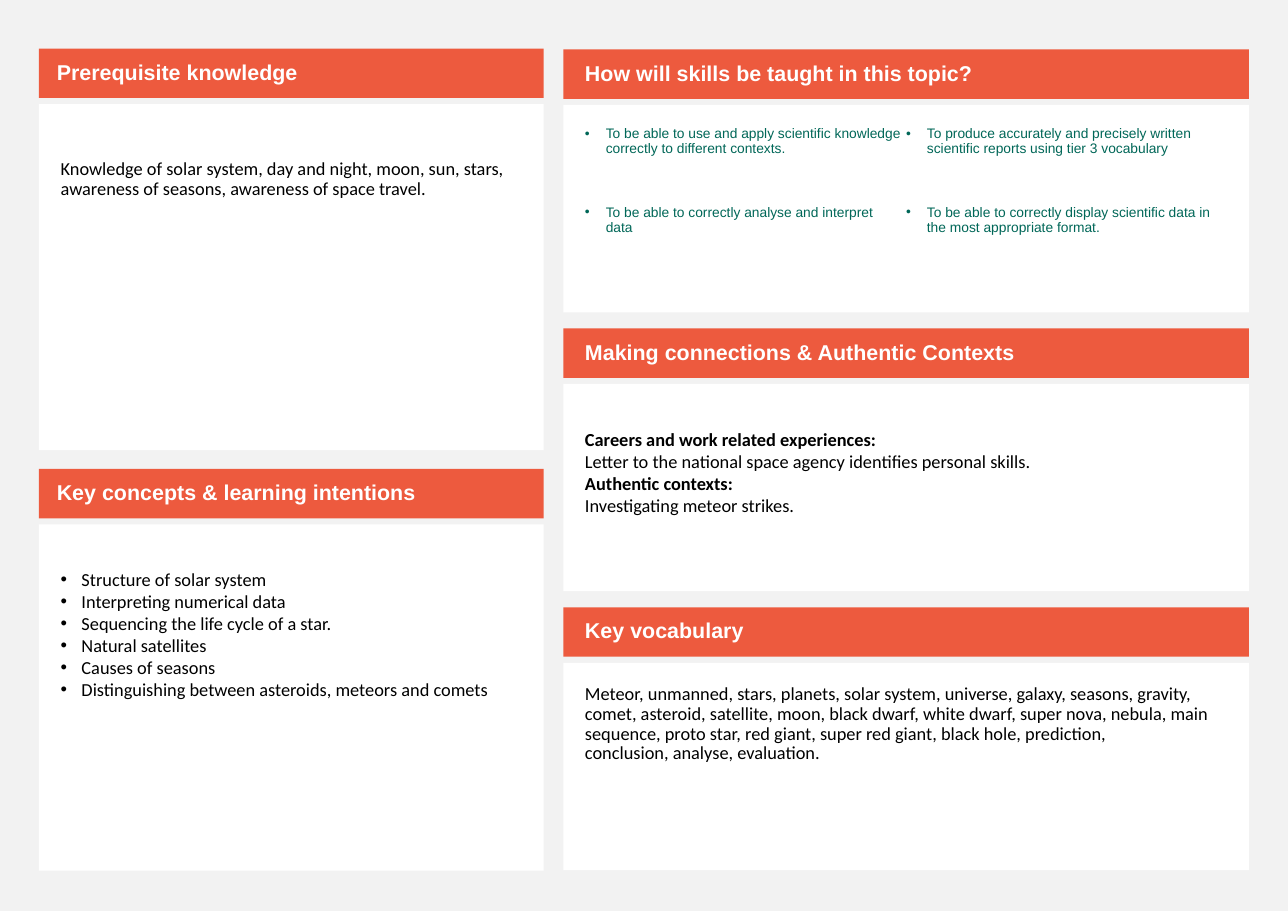
from dataclasses import dataclass

from lxml import etree
from pptx import Presentation
from pptx.dml.color import RGBColor
from pptx.enum.shapes import MSO_SHAPE
from pptx.enum.text import MSO_ANCHOR, PP_ALIGN
from pptx.oxml.ns import qn
from pptx.shapes.autoshape import Shape
from pptx.slide import Slide
from pptx.util import Cm, Pt

RECTANGLE = MSO_SHAPE.RECTANGLE
TOP, MIDDLE = MSO_ANCHOR.TOP, MSO_ANCHOR.MIDDLE
LEFT = PP_ALIGN.LEFT

GREY = RGBColor(0xF2, 0xF2, 0xF2)
ORANGE = RGBColor(0xED, 0x5A, 0x3E)
WHITE = RGBColor(0xFF, 0xFF, 0xFF)
BLACK = RGBColor(0x00, 0x00, 0x00)
GREEN = RGBColor(0x00, 0x67, 0x58)

HEADER_HEIGHT = 1.14
BODY_OFFSET = 1.28
PADDING = 0.5
BULLET_INDENT = 0.48
HARD_SPACE = chr(160)  # keeps two words on one line


@dataclass(frozen=True)
class TextStyle:
    font: str
    size: float
    color: RGBColor
    bold: bool = False
    line_spacing: float = 1.0
    space_before: float = 0
    bullet: bool = False


@dataclass(frozen=True)
class Panel:
    title: str
    lines: tuple[str, ...]
    style: TextStyle
    top_inset: float = PADDING
    bold_lines: tuple[int, ...] = ()
    text_columns: int = 1


@dataclass(frozen=True)
class Column:
    left: float
    top: float
    width: float
    body_height: float
    pitch: float
    title_inset: float
    panels: tuple[Panel, ...]


TITLE = TextStyle("Arial", 14, WHITE, bold=True, line_spacing=0.9)
PROSE = TextStyle("Calibri", 12, BLACK, line_spacing=0.9)
LIST = TextStyle("Calibri", 12, BLACK, bullet=True)
CONTEXT = TextStyle("Calibri", 12, BLACK)
SKILL = TextStyle("Arial", 9, GREEN, line_spacing=0.9, space_before=32, bullet=True)

COLUMNS = (
    Column(0.9, 1.12, 11.64, 7.98, 9.69, 0.41, (
        Panel("Prerequisite knowledge", (
            "Knowledge of solar system, day and night, moon, sun, stars, "
            "awareness of seasons, awareness of space travel.",
        ), PROSE, top_inset=1.28),
        Panel("Key concepts & learning intentions", (
            "Structure of solar system",
            "Interpreting numerical data",
            "Sequencing the life cycle of a star.",
            "Natural satellites",
            "Causes of seasons",
            "Distinguishing between asteroids, meteors and comets",
        ), LIST, top_inset=1.0),
    )),
    Column(12.99, 1.14, 15.81, 4.78, 6.43, PADDING, (
        Panel("How will skills be taught in this topic?", (
            "To be able to use and apply scientific knowledge correctly to different contexts.",
            f"To be able to correctly analyse and interpret data{HARD_SPACE}",
            "To produce accurately and precisely written scientific reports using tier 3 vocabulary",
            "To be able to correctly display scientific data in the most appropriate format.",
        ), SKILL, text_columns=2),
        Panel("Making connections & Authentic Contexts", (
            "Careers and work related experiences:",
            "Letter to the national space agency identifies personal skills.",
            "Authentic contexts:",
            "Investigating meteor strikes.",
        ), CONTEXT, top_inset=1.02, bold_lines=(0, 2)),
        Panel("Key vocabulary", (
            "Meteor, unmanned, stars, planets, solar system, universe, galaxy, seasons, "
            "gravity, comet, asteroid, satellite, moon, black dwarf, white dwarf, super nova, "
            "nebula, main sequence, proto star, red giant, super red giant, black hole, "
            f"prediction, conclusion,{HARD_SPACE}analyse, evaluation.",
        ), PROSE),
    )),
)


def add_box(page: Slide, left: float, top: float, width: float, height: float,
            fill: RGBColor) -> Shape:
    box = page.shapes.add_shape(RECTANGLE, Cm(left), Cm(top), Cm(width), Cm(height))
    box.shadow.inherit = False
    box.fill.solid()
    box.fill.fore_color.rgb = fill
    box.line.fill.background()
    return box


def write_text(box: Shape, lines: tuple[str, ...], style: TextStyle,
               bold_lines: tuple[int, ...] = ()) -> None:
    frame = box.text_frame
    frame.word_wrap = True
    frame.text = "\n".join(lines)
    for index, para in enumerate(frame.paragraphs):
        para.alignment = LEFT
        para.line_spacing = style.line_spacing
        para.space_before = Pt(style.space_before if index else 0)
        for span in para.runs:
            span.font.name = style.font
            span.font.size = Pt(style.size)
            span.font.bold = style.bold or index in bold_lines
            span.font.color.rgb = style.color
        if style.bullet:
            properties = para._p.get_or_add_pPr()
            properties.set("marL", str(Cm(BULLET_INDENT)))
            properties.set("indent", str(-Cm(BULLET_INDENT)))
            etree.SubElement(properties, qn("a:buFont")).set("typeface", "Arial")
            etree.SubElement(properties, qn("a:buChar")).set("char", "•")


def set_insets(box: Shape, left: float, top: float, right: float, bottom: float) -> None:
    frame = box.text_frame
    frame.margin_left, frame.margin_top = Cm(left), Cm(top)
    frame.margin_right, frame.margin_bottom = Cm(right), Cm(bottom)


def draw_panel(page: Slide, column: Column, panel: Panel, top: float) -> None:
    # Heading bar
    header = add_box(page, column.left, top, column.width, HEADER_HEIGHT, ORANGE)
    set_insets(header, column.title_inset, 0.13, 0.25, 0.13)
    header.text_frame.vertical_anchor = MIDDLE
    write_text(header, (panel.title,), TITLE)

    # Content area
    body = add_box(page, column.left, top + BODY_OFFSET, column.width,
                   column.body_height, WHITE)
    set_insets(body, PADDING, panel.top_inset, PADDING, PADDING)
    body.text_frame.vertical_anchor = TOP
    write_text(body, panel.lines, panel.style, panel.bold_lines)
    if panel.text_columns > 1:
        body.text_frame._txBody.bodyPr.set("numCol", str(panel.text_columns))


def main() -> None:
    deck = Presentation()
    deck.slide_width, deck.slide_height = Cm(29.7), Cm(21)
    page = deck.slides.add_slide(deck.slide_layouts[6])
    page.background.fill.solid()
    page.background.fill.fore_color.rgb = GREY

    for column in COLUMNS:
        for row, panel in enumerate(column.panels):
            draw_panel(page, column, panel, column.top + row * column.pitch)

    deck.save("out.pptx")


if __name__ == "__main__":
    main()
